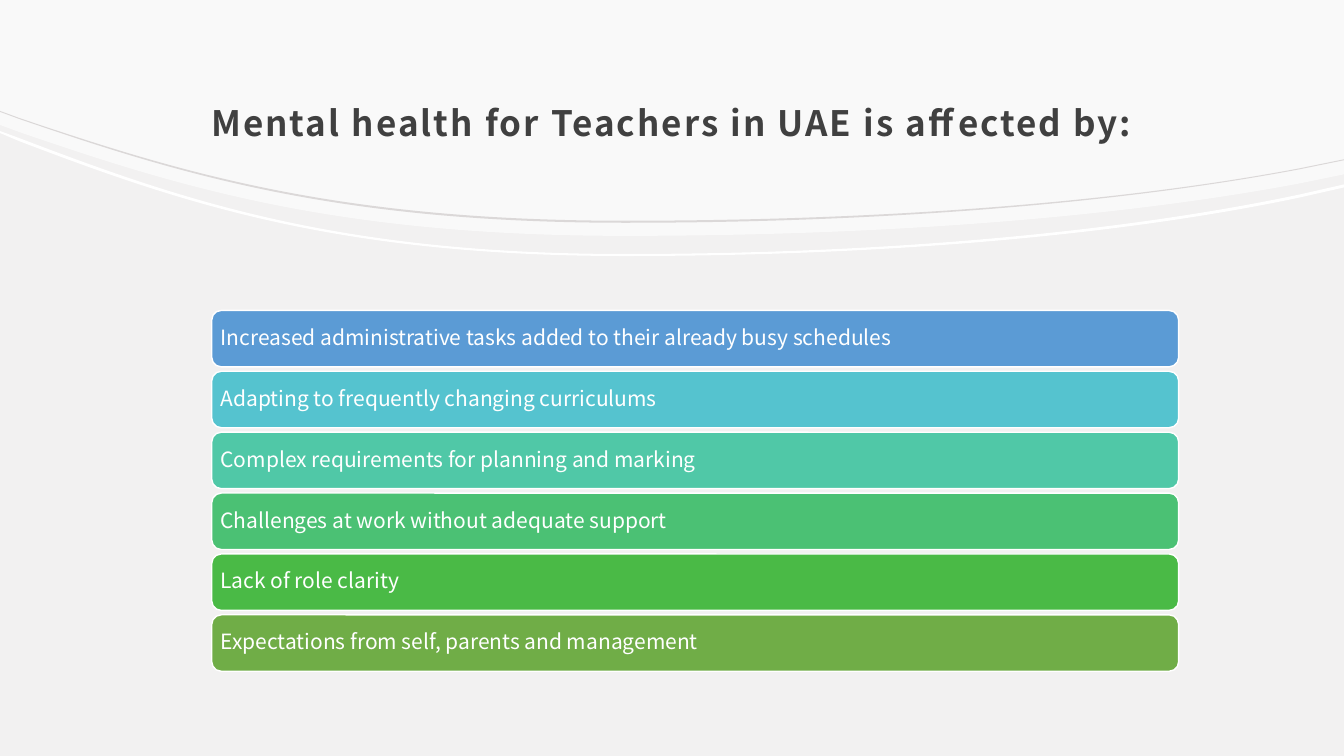
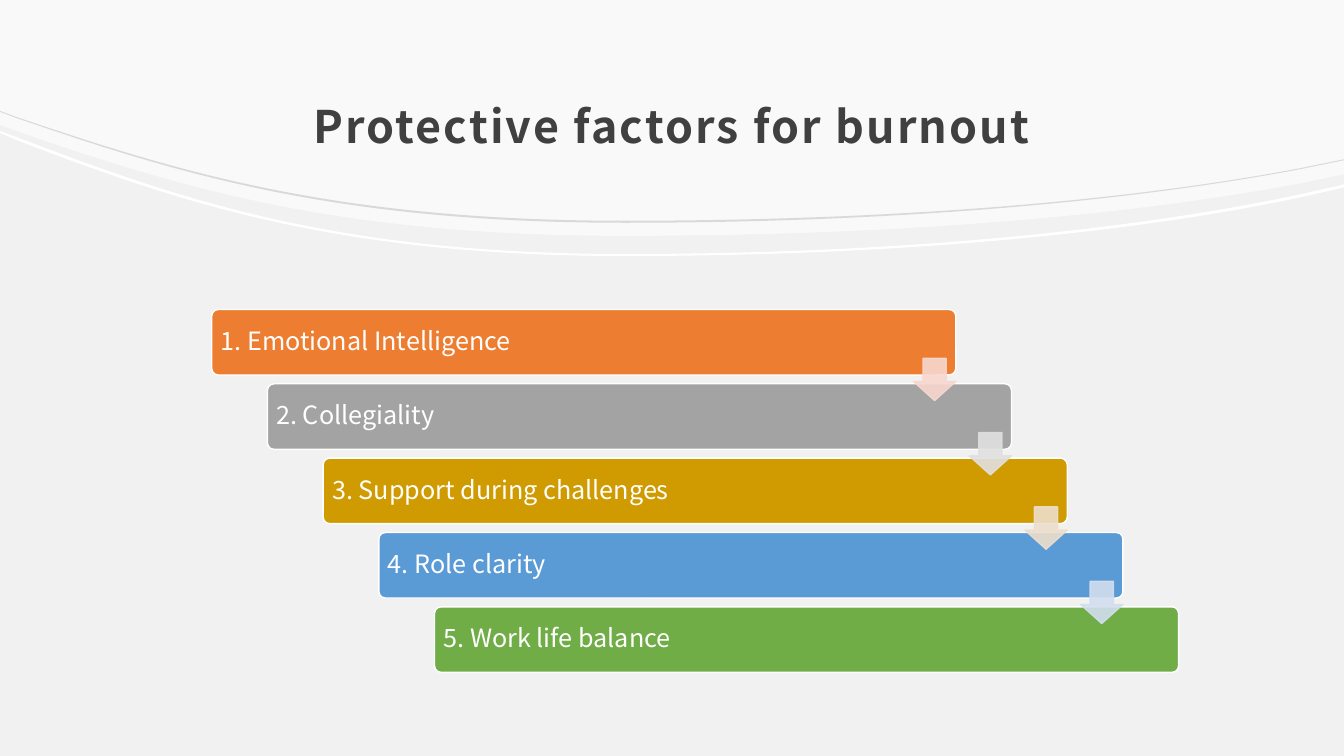
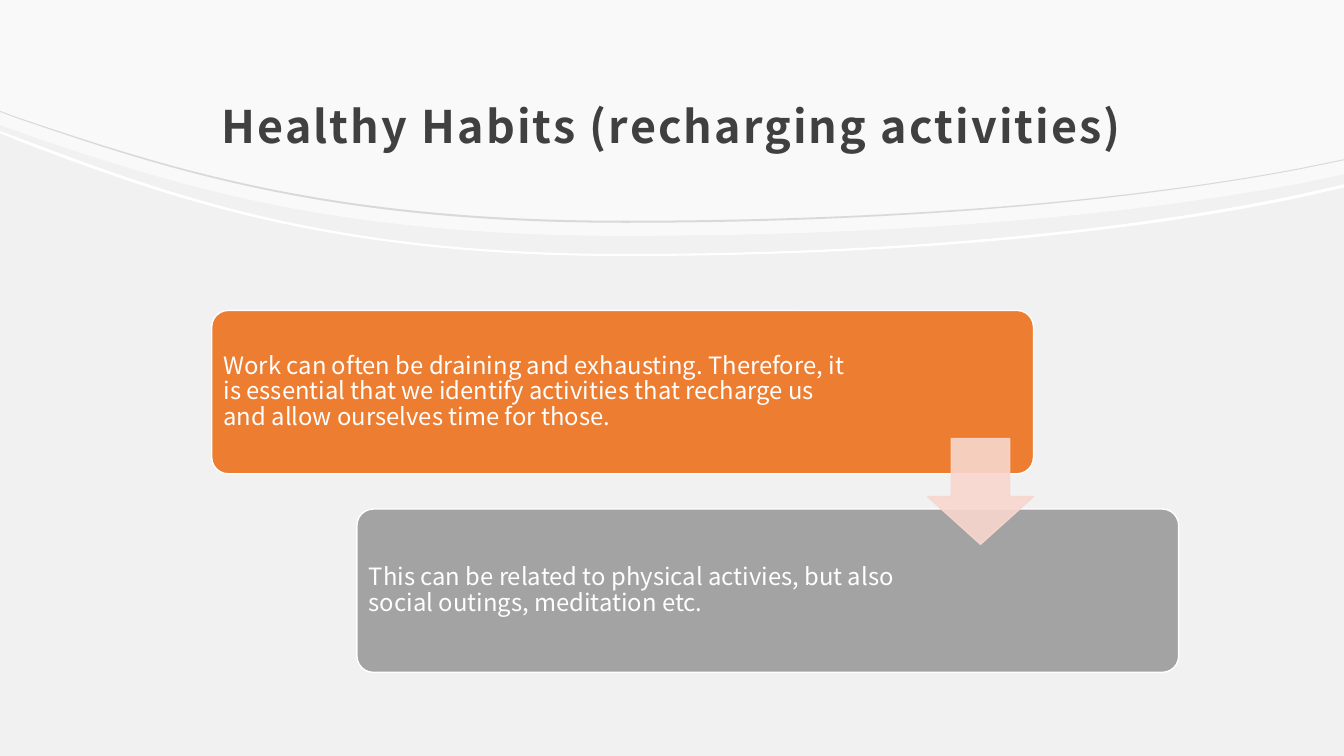
import collections

import lxml.etree
import pptx
import pptx.dml.color
import pptx.enum.shapes
import pptx.enum.text
import pptx.oxml.ns
import pptx.util

EMU_PER_PX = 9144
SLIDE_WIDTH, SLIDE_HEIGHT = 1333, 750
FONT = "Noto Sans CJK JP"
COLORS = {
    "background": "F2F1F1", "white": "FFFFFF", "hairline": "DBD8D8", "title": "404040",
    "blue": "5B9BD5", "aqua": "55C3CF", "teal": "50C8A7", "mint": "4BC174",
    "leaf": "4ABA46", "green": "70AD47", "orange": "ED7D31", "grey": "A3A3A3",
    "gold": "CF9B00", "pale orange": "F8D7CE", "pale grey": "E0E0E0",
    "pale gold": "EDDECC", "pale blue": "D2DEEF",
}

Box = collections.namedtuple("Box", "left top width height")
Card = collections.namedtuple("Card", "text color right_inset")

TITLE_BOX = Box(133, 59, 1067, 114)

# Each wave runs straight, then along two cubic curves, then straight again.
WAVE_X = (0, 19, 179, 333, 620, 875, 1109, 1289, SLIDE_WIDTH)
HEADER_EDGE = (124, 131, 186, 234, 234, 234, 216, 182, 173)
WHITE_LINE = ((130, 137, 198, 252, 252, 252, 231, 193, 183),
              (132, 140, 201, 254, 254, 254, 234, 196, 186))
GREY_LINE = ((110, 117, 171, 219, 219, 219, 201, 167, 158),
             (111, 118, 173, 221, 221, 221, 202, 168, 159))
# Where curves begin among the segments of a lower wave and a returning upper wave.
CURVE_STARTS = (1, 4, 10, 13)


def px(length):
    return pptx.util.Emu(round(length * EMU_PER_PX))


def rgb(name):
    return pptx.dml.color.RGBColor.from_string(COLORS[name])


def fill_solid(fill, color, opacity=100):
    fill.solid()
    fill.fore_color.rgb = rgb(color)
    if opacity < 100:
        for srgb in fill._xPr.iter(pptx.oxml.ns.qn("a:srgbClr")):
            alpha = lxml.etree.SubElement(srgb, pptx.oxml.ns.qn("a:alpha"))
            alpha.set("val", str(opacity * 1000))


def write(frame, text, size, color, spacing, insets):
    """Put one paragraph in a frame; insets are left, top, right, bottom."""
    frame.word_wrap = True
    frame.vertical_anchor = pptx.enum.text.MSO_ANCHOR.MIDDLE
    (frame.margin_left, frame.margin_top,
     frame.margin_right, frame.margin_bottom) = map(px, insets)
    paragraph = frame.paragraphs[0]
    paragraph.text = text
    paragraph.alignment = pptx.enum.text.PP_ALIGN.LEFT
    paragraph.line_spacing = spacing
    paragraph.font.name = FONT
    paragraph.font.size = pptx.util.Pt(size)
    paragraph.font.color.rgb = rgb(color)
    return paragraph


def wave(heights):
    return list(zip(WAVE_X, heights))


def bend(band):
    """Turn each three straight segments of a wave into one cubic curve."""
    segments = list(band._element.iter(pptx.oxml.ns.qn("a:lnTo")))
    for start in CURVE_STARTS:
        if start < len(segments):
            first, *others = segments[start:start + 3]
            curve = lxml.etree.Element(pptx.oxml.ns.qn("a:cubicBezTo"))
            first.addprevious(curve)
            for segment in (first, *others):
                curve.append(segment[0])
                segment.getparent().remove(segment)


def add_band(slide, upper, lower, color, opacity=100):
    outline = lower + upper[::-1]
    builder = slide.shapes.build_freeform(*outline[0], scale=EMU_PER_PX)
    builder.add_line_segments(outline[1:], close=True)
    band = builder.convert_to_shape()
    bend(band)
    band.shadow.inherit = False
    fill_solid(band.fill, color, opacity)
    band.line.fill.background()


def add_header(slide, title, size, spacing):
    add_band(slide, [(0, 0), (SLIDE_WIDTH, 0)], wave(HEADER_EDGE), "white", 60)
    add_band(slide, *map(wave, WHITE_LINE), "white")
    heading = slide.shapes.add_textbox(*map(px, TITLE_BOX))
    paragraph = write(heading.text_frame, title, size, "title", spacing, (12, 12, 12, 10))
    paragraph.alignment = pptx.enum.text.PP_ALIGN.CENTER
    paragraph.font.bold = True
    paragraph._p.pPr.find(pptx.oxml.ns.qn("a:defRPr")).set("spc", "150")
    add_band(slide, *map(wave, GREY_LINE), "hairline")


def add_preset(slide, kind, box, adjustments, color, line_color, opacity=100):
    preset = slide.shapes.add_shape(kind, *map(px, box))
    for index, value in enumerate(adjustments):
        preset.adjustments[index] = value
    preset.shadow.inherit = False
    fill_solid(preset.fill, color, opacity)
    fill_solid(preset.line.fill, line_color, opacity)
    preset.line.width = pptx.util.Pt(1)
    return preset


def add_card(slide, box, card, roundness, size, inset):
    panel = add_preset(slide, pptx.enum.shapes.MSO_SHAPE.ROUNDED_RECTANGLE, box,
                       [roundness], card.color, "white")
    write(panel.text_frame, card.text, size, "white", 0.9,
          (inset, inset, card.right_inset, inset))


def add_stack(slide, box, cards, card_height):
    """Fill the box with full-width cards at equal gaps."""
    pitch = (box.height - card_height) / (len(cards) - 1)
    for index, card in enumerate(cards):
        row = Box(box.left, box.top + index * pitch, box.width, card_height)
        add_card(slide, row, card, 0.17, 15, 6)


def add_staircase(slide, box, cards, card_width, card_height, size, arrow_side, arrow_colors):
    """Step cards from top left to bottom right, with an arrow over each gap."""
    steps = len(cards) - 1
    step_x = (box.width - card_width) / steps
    step_y = (box.height - card_height) / steps
    for index, card in enumerate(cards):
        stair = Box(box.left + index * step_x, box.top + index * step_y,
                    card_width, card_height)
        add_card(slide, stair, card, 0.1, size, 7)
    for index, color in enumerate(arrow_colors):
        right = box.left + index * step_x + card_width
        gap_middle = box.top + index * step_y + (card_height + step_y) / 2
        arrow_box = Box(right - arrow_side, gap_middle - arrow_side / 2,
                        arrow_side, arrow_side)
        add_preset(slide, pptx.enum.shapes.MSO_SHAPE.DOWN_ARROW, arrow_box,
                   [0.55, 0.45], color, color, 90)


def main():
    deck = pptx.Presentation()
    deck.slide_width, deck.slide_height = px(SLIDE_WIDTH), px(SLIDE_HEIGHT)
    fill_solid(deck.slide_master.background.fill, "background")
    blank = deck.slide_layouts[6]

    causes = deck.slides.add_slide(blank)
    add_header(causes, "Mental health for Teachers in UAE is affected by:", 25, 1.2)
    add_stack(causes, Box(210, 308, 959, 358), [
        Card("Increased administrative tasks added to their already busy schedules", "blue", 6),
        Card("Adapting to frequently changing curriculums", "aqua", 6),
        Card("Complex requirements for planning and marking", "teal", 6),
        Card("Challenges at work without adequate support", "mint", 6),
        Card("Lack of role clarity", "leaf", 6),
        Card("Expectations from self, parents and management", "green", 6),
    ], 56)

    factors = deck.slides.add_slide(blank)
    add_header(factors, "Protective factors for burnout", 32, 1.3)
    add_staircase(factors, Box(210, 307, 959, 360), [
        Card("1. Emotional Intelligence", "orange", 80),
        Card("2. Collegiality", "grey", 104),
        Card("3. Support during challenges", "gold", 104),
        Card("4. Role clarity", "blue", 104),
        Card("5. Work life balance", "green", 104),
    ], 738, 65, 18, 42, ["pale orange", "pale grey", "pale gold", "pale blue"])

    habits = deck.slides.add_slide(blank)
    add_header(habits, "Healthy Habits (recharging activities)", 32, 1.3)
    add_staircase(habits, Box(210, 308, 959, 359), [
        Card("Work can often be draining and exhausting. Therefore, it is essential that we "
             "identify activities that recharge us and allow ourselves time for those.",
             "orange", 174),
        Card("This can be related to physical activies, but also social outings, "
             "meditation etc.", "grey", 255),
    ], 815, 162, 17, 105, ["pale orange"])

    deck.save("out.pptx")


if __name__ == "__main__":
    main()
